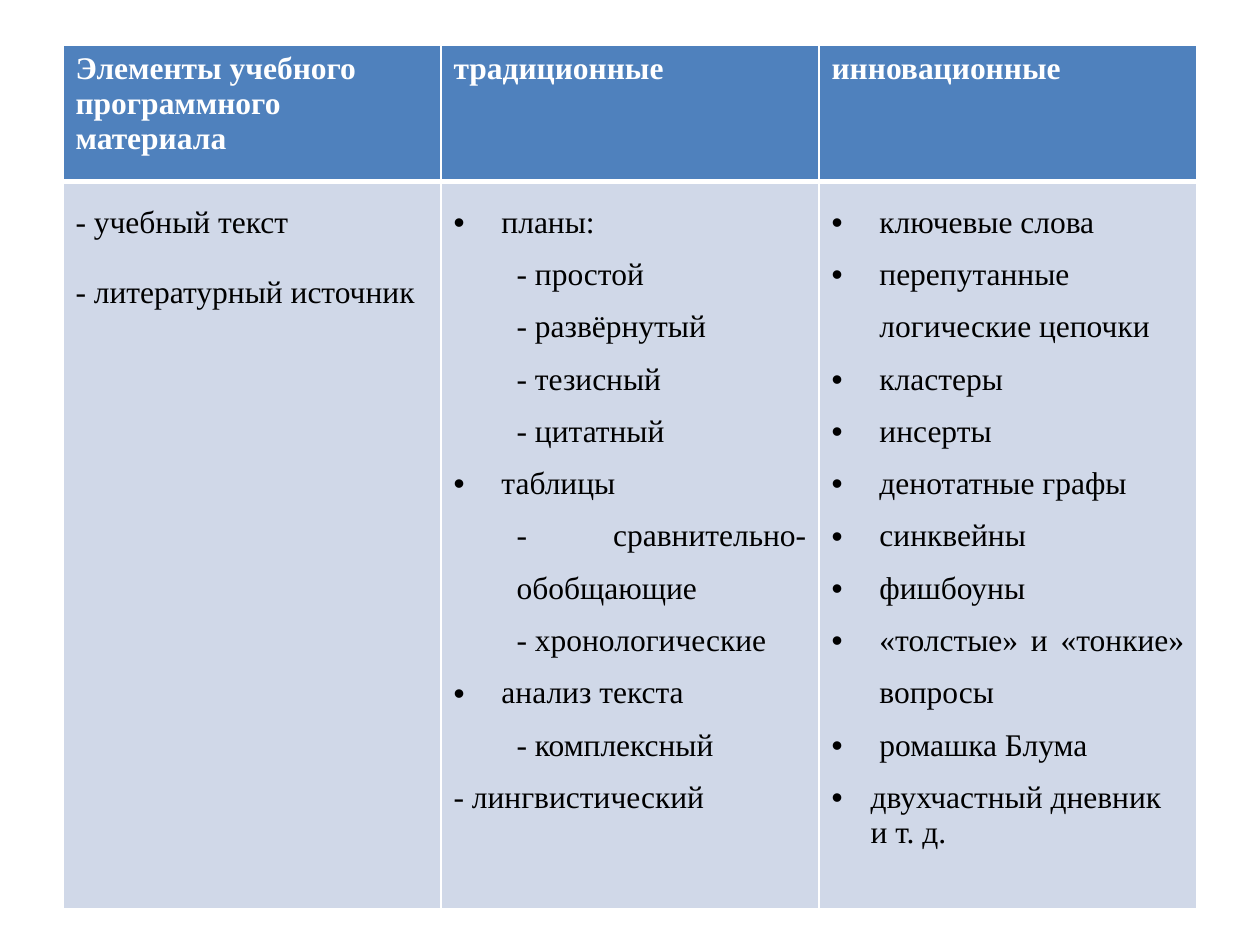
from dataclasses import dataclass

from lxml.etree import SubElement
from pptx import Presentation
from pptx.dml.color import RGBColor
from pptx.enum.text import PP_ALIGN
from pptx.oxml.ns import qn
from pptx.util import Inches, Pt


@dataclass(frozen=True)
class Theme:
    font: str = "Times New Roman"
    size: int = 18
    header_fill: str = "4F81BD"
    body_fill: str = "D0D8E8"
    header_text: str = "FFFFFF"
    body_text: str = "000000"
    border: str = "FFFFFF"


@dataclass(frozen=True)
class Style:
    margin: float = 0
    hanging: float = 0
    justified: bool = True
    space_after: int = 0


theme = Theme()
note = Style(space_after=10)
bullet = Style(margin=0.38, hanging=0.38)
last_bullet = Style(margin=0.38, hanging=0.38, space_after=10)
closing_bullet = Style(margin=0.31, hanging=0.31, justified=False)
subitem = Style(margin=0.5)
last_subitem = Style(margin=0.5, space_after=10)
plain = Style(justified=False)

columns = [
    ("Элементы учебного программного материала", [
        ("- учебный текст", note),
        ("- литературный источник", note),
    ]),
    ("традиционные", [
        ("планы:", bullet),
        ("- простой", subitem),
        ("- развёрнутый", subitem),
        ("- тезисный", subitem),
        ("- цитатный", subitem),
        ("таблицы", bullet),
        ("- сравнительно-обобщающие", subitem),
        ("- хронологические", subitem),
        ("анализ текста", bullet),
        ("- комплексный", last_subitem),
        ("- лингвистический", plain),
    ]),
    ("инновационные", [
        ("ключевые слова", bullet),
        ("перепутанные логические цепочки", bullet),
        ("кластеры", bullet),
        ("инсерты", bullet),
        ("денотатные графы", bullet),
        ("синквейны", bullet),
        ("фишбоуны", bullet),
        ("«толстые» и «тонкие» вопросы", bullet),
        ("ромашка Блума", last_bullet),
        ("двухчастный дневник и т. д.", closing_bullet),
    ]),
]


def style_cell(cell, fill, thick_side):
    """Draw the borders, with one side thicker, and fill the cell."""
    properties = cell._tc.get_or_add_tcPr()
    for side in ("lnL", "lnR", "lnT", "lnB"):
        width = Pt(3 if side == thick_side else 1)
        line = SubElement(properties, qn(f"a:{side}"), w=str(width))
        solid_fill = SubElement(line, qn("a:solidFill"))
        SubElement(solid_fill, qn("a:srgbClr"), val=theme.border)
    cell.fill.solid()
    cell.fill.fore_color.rgb = RGBColor.from_string(fill)


def write_paragraph(paragraph, text, style, color, bold=False):
    paragraph.text = text
    if style.justified:
        paragraph.alignment = PP_ALIGN.JUSTIFY
        paragraph.line_spacing = 1.5
    if style.space_after:
        paragraph.space_after = Pt(style.space_after)
    properties = paragraph._p.get_or_add_pPr()
    properties.set("marL", str(Inches(style.margin)))
    properties.set("indent", str(Inches(-style.hanging)))
    if style.hanging:
        SubElement(properties, qn("a:buFont"), typeface="Arial")
        SubElement(properties, qn("a:buChar"), char="•")
    for run in paragraph.runs:
        run.font.name = theme.font
        run.font.size = Pt(theme.size)
        run.font.bold = bold
        run.font.color.rgb = RGBColor.from_string(color)


presentation = Presentation()
presentation.slide_width = Inches(10)
presentation.slide_height = Inches(7.5)
slide = presentation.slides.add_slide(presentation.slide_layouts[6])

table = slide.shapes.add_table(
    2, len(columns), Inches(0.5), Inches(0.36), Inches(9), Inches(6.85)
).table
table.rows[0].height = Inches(1.08)
table.rows[1].height = Inches(5.77)

for index, (heading, items) in enumerate(columns):
    table.columns[index].width = Inches(3)

    header = table.cell(0, index)
    style_cell(header, theme.header_fill, "lnB")
    write_paragraph(header.text_frame.paragraphs[0], heading, plain,
                    theme.header_text, bold=True)

    body = table.cell(1, index)
    style_cell(body, theme.body_fill, "lnT")
    text_frame = body.text_frame
    text_frame.text = "\n".join(text for text, style in items)
    for paragraph, (text, style) in zip(text_frame.paragraphs, items):
        write_paragraph(paragraph, text, style, theme.body_text)

presentation.save("out.pptx")
